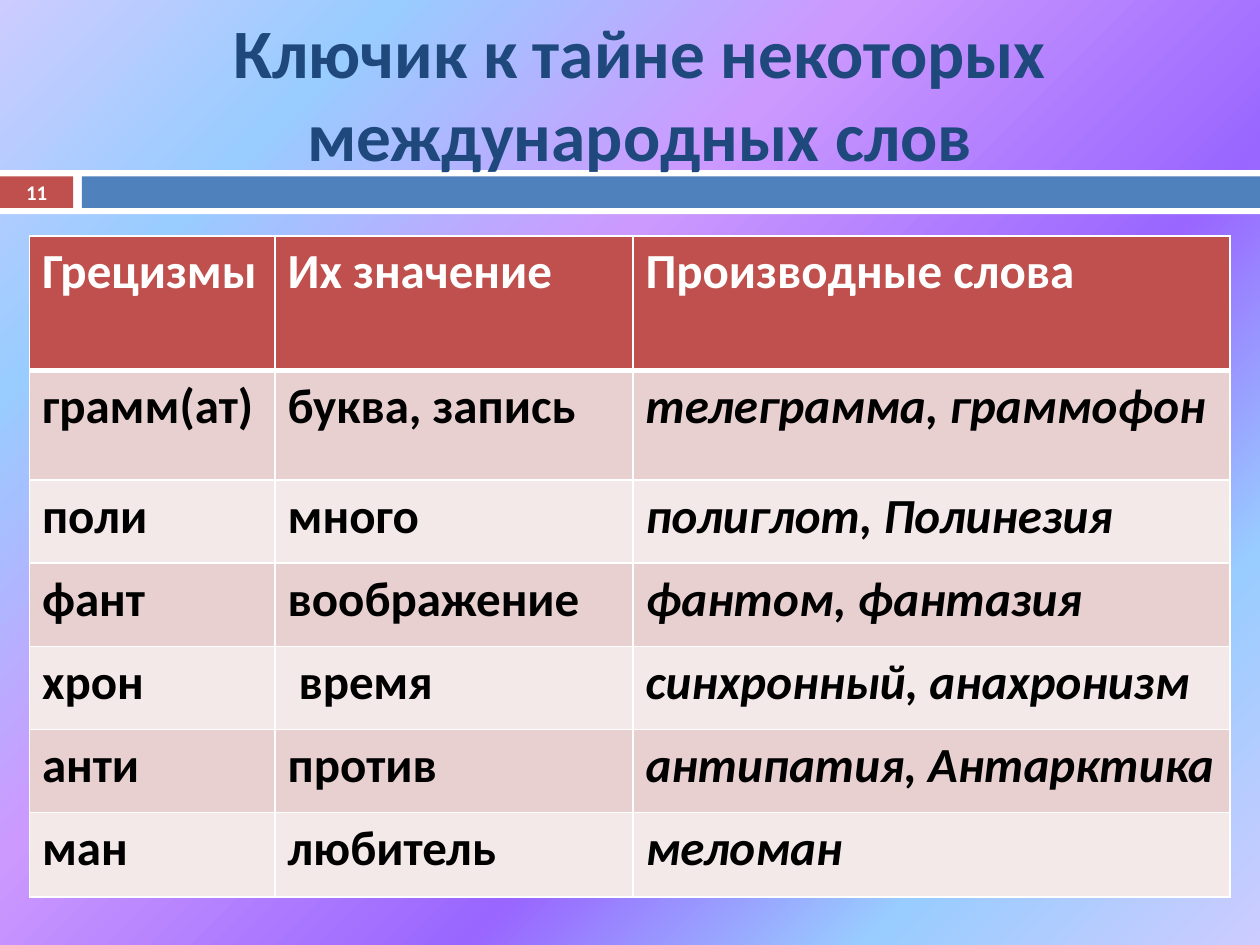
from pptx import Presentation
from pptx.dml.color import RGBColor
from pptx.enum.shapes import MSO_SHAPE
from pptx.enum.text import MSO_ANCHOR, PP_ALIGN
from pptx.oxml import parse_xml
from pptx.oxml.ns import nsdecls
from pptx.util import Pt

WHITE, RED, BLUE, NAVY, BLACK = "FFFFFF", "C0504D", "4F81BD", "1F497D", "000000"
BANDS = ("E8D0D0", "F4E9E9")
GRADIENT = [(0, "CCCCFF"), (18, "99CCFF"), (36, "9966FF"),
            (61, "CC99FF"), (82, "99CCFF"), (100, "CCCCFF")]
WORDS = [
    ("Грецизмы", "Их значение", "Производные слова"),
    ("грамм(ат)", "буква, запись", "телеграмма, граммофон"),
    ("поли", "много", "полиглот, Полинезия"),
    ("фант", "воображение", "фантом, фантазия"),
    ("хрон", " время", "синхронный, анахронизм"),
    ("анти", "против", "антипатия, Антарктика"),
    ("ман", "любитель", "меломан"),
]
COLUMN_WIDTHS = (140.4, 204.5, 341.3)
ROW_HEIGHTS = (77, 62.6, 47.5, 47.5, 47.5, 47.5, 48.2)


def paint(color_format, color):
    """Apply a hex colour to a fill or a font."""
    if hasattr(color_format, "solid"):
        color_format.solid()
        color_format.fore_color.rgb = RGBColor.from_string(color)
    else:
        color_format.color.rgb = RGBColor.from_string(color)


def write(text_frame, text, size=28, color=BLACK, italic=False, align=PP_ALIGN.LEFT):
    """Put one bold Calibri paragraph in a text frame."""
    paragraph = text_frame.paragraphs[0]
    paragraph.alignment = align
    run = paragraph.add_run()
    run.text = text
    run.font.name = "Calibri"
    run.font.size = Pt(size)
    run.font.bold = True
    run.font.italic = italic
    paint(run.font, color)


def add_label(slide, text, left, top, width, height, **text_format):
    """Add a centred text box without margins."""
    text_frame = slide.shapes.add_textbox(Pt(left), Pt(top), Pt(width), Pt(height)).text_frame
    text_frame.word_wrap = True
    text_frame.vertical_anchor = MSO_ANCHOR.MIDDLE
    text_frame.margin_left = text_frame.margin_right = 0
    text_frame.margin_top = text_frame.margin_bottom = 0
    write(text_frame, text, align=PP_ALIGN.CENTER, **text_format)


def add_bar(slide, color, left, top, width, height):
    """Add a plain filled rectangle."""
    shape = slide.shapes.add_shape(
        MSO_SHAPE.RECTANGLE, Pt(left), Pt(top), Pt(width), Pt(height))
    shape.shadow.inherit = False
    paint(shape.fill, color)
    shape.line.fill.background()


def set_background(slide):
    """Fill the slide with a circular gradient centred at the lower right."""
    stops = "".join(f'<a:gs pos="{position * 1000}"><a:srgbClr val="{color}"/></a:gs>'
                    for position, color in GRADIENT)
    background = parse_xml(
        f'<p:bg {nsdecls("p", "a")}><p:bgPr><a:gradFill rotWithShape="1">'
        f'<a:gsLst>{stops}</a:gsLst><a:path path="circle">'
        '<a:fillToRect l="100000" t="100000"/></a:path></a:gradFill>'
        '<a:effectLst/></p:bgPr></p:bg>')
    slide.element.cSld.insert(0, background)


def add_page_band(slide, left, top, width, height):
    """Draw the white band with the page number and the blue bar."""
    number_width, bar_offset, inset = 41.8, 46.8, 3.6
    bar_top, bar_height = top + inset, height - 2 * inset
    add_bar(slide, WHITE, left, top, width, height)
    add_bar(slide, RED, left, bar_top, number_width, bar_height)
    add_bar(slide, BLUE, left + bar_offset, bar_top, width - bar_offset, bar_height)
    add_label(slide, "11", left, bar_top, number_width, bar_height, size=11.9, color=WHITE)


def set_borders(cell, bottom=1, top=1):
    """Give a cell white borders of the given widths."""
    properties = cell._tc.get_or_add_tcPr()
    widths = {"lnL": 1, "lnR": 1, "lnT": top, "lnB": bottom}
    for index, (side, width) in enumerate(widths.items()):
        properties.insert(index, parse_xml(
            f'<a:{side} {nsdecls("a")} w="{Pt(width)}"><a:solidFill>'
            f'<a:srgbClr val="{WHITE}"/></a:solidFill></a:{side}>'))


def add_word_table(slide, left, top, width, height):
    """Add the table of Greek roots, meanings and derived words."""
    table = slide.shapes.add_table(
        len(WORDS), len(COLUMN_WIDTHS), Pt(left), Pt(top), Pt(width), Pt(height)).table
    table.horz_banding = False
    for column, column_width in zip(table.columns, COLUMN_WIDTHS):
        column.width = Pt(column_width)
    for row_index, (row, row_height) in enumerate(zip(table.rows, ROW_HEIGHTS)):
        row.height = Pt(row_height)
        header = row_index == 0
        for column_index, text in enumerate(WORDS[row_index]):
            cell = table.cell(row_index, column_index)
            paint(cell.fill, RED if header else BANDS[(row_index - 1) % 2])
            set_borders(cell, bottom=3 if header else 1, top=3 if row_index == 1 else 1)
            write(cell.text_frame, text, color=WHITE if header else BLACK,
                  italic=column_index == 2 and not header)


def main():
    """Build and save the slide."""
    presentation = Presentation()
    presentation.slide_width, presentation.slide_height = Pt(720), Pt(540)
    slide = presentation.slides.add_slide(presentation.slide_layouts[6])
    set_background(slide)
    add_page_band(slide, 0, 97.2, 720, 25.2)
    add_label(slide, "Ключик к тайне некоторых международных слов",
              44.6, 22.3, 642.2, 60.5, size=39.6, color=NAVY)
    add_word_table(slide, 16.8, 134.8, sum(COLUMN_WIDTHS), sum(ROW_HEIGHTS))
    presentation.save("out.pptx")


if __name__ == "__main__":
    main()
